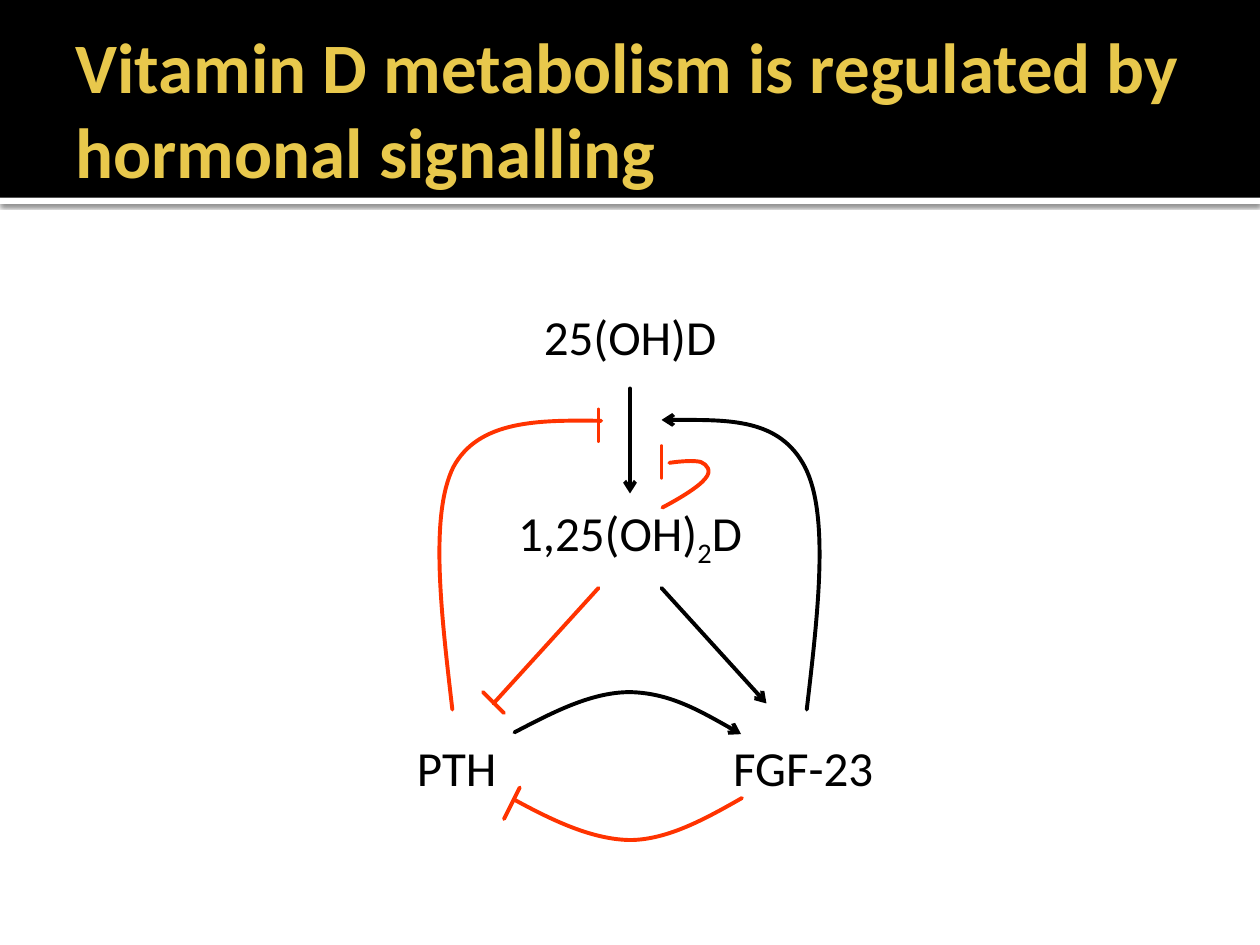
from lxml import etree
from pptx import Presentation
from pptx.dml.color import RGBColor
from pptx.enum.shapes import MSO_CONNECTOR, MSO_SHAPE
from pptx.enum.text import MSO_ANCHOR, MSO_AUTO_SIZE, PP_ALIGN
from pptx.oxml.ns import qn
from pptx.util import Pt

RECTANGLE = MSO_SHAPE.RECTANGLE
STRAIGHT = MSO_CONNECTOR.STRAIGHT
MIDDLE = MSO_ANCHOR.MIDDLE
LEFT, CENTER = PP_ALIGN.LEFT, PP_ALIGN.CENTER
NO_AUTOFIT = MSO_AUTO_SIZE.NONE
TITLE_ONLY_LAYOUT = 5

THEME = {
    "font": "Calibri", "title_size": 40.5, "label_size": 28, "line_width": 2.25,
    "title": RGBColor(0xE8, 0xC8, 0x4C), "black": RGBColor(0, 0, 0),
    "white": RGBColor(255, 255, 255), "inhibit": RGBColor(0xFF, 0x33, 0x00),
}

# Content, all lengths in points
SLIDE_SIZE = (720, 540)
TITLE = "Vitamin D metabolism is regulated by hormonal signalling"
TITLE_BOX = (36, 12.24, 648, 98.64)
HEADER_HEIGHT, RULE_HEIGHT = 113, 3.6

# Runs (text, is subscript), centre x, top, width
LABEL_HEIGHT = 60
LABELS = [
    ([("25(OH)D", False)], 360, 162, 204),
    ([("1,25(OH)", False), ("2", True), ("D", False)], 360, 276, 204),
    ([("PTH", False)], 261, 408, 102),
    ([("FGF-23", False)], 459, 408, 102),
]

# Start, end, colour, has arrowhead
STRAIGHT_LINES = [
    ((360, 222), (360, 282), "black", True),
    ((378, 336), (438, 402), "black", True),
    ((342, 336), (282, 402), "inhibit", False),
    # Inhibition bars
    ((276, 395.5), (288, 407.5), "inhibit", False),
    ((288, 468), (297, 450), "inhibit", False),
    ((342, 234), (342, 252), "inhibit", False),
    ((378, 255), (378, 273), "inhibit", False),
]

# Start point followed by three Bezier points per segment, colour, has arrowhead
CURVES = [
    # PTH to FGF-23
    ([(294, 418.5), (316, 407), (338, 395.5), (360, 395.5),
      (382, 396), (402.5, 407.5), (423.5, 419.5)], "black", True),
    # FGF-23 to PTH
    ([(294, 457), (316, 469), (339, 480), (361, 480),
      (382, 479.5), (403, 468), (424, 456)], "inhibit", False),
    # PTH to the conversion step
    ([(258.5, 405.5), (252, 350), (245.5, 294.5), (259, 267),
      (273.5, 240), (308, 240), (343.5, 240.5)], "inhibit", False),
    # FGF-23 to the conversion step
    ([(461, 405.5), (467.5, 350), (474, 294.5), (460, 267),
      (445.5, 239), (412, 240), (378, 240)], "black", True),
    # Self-inhibition loop
    ([(378.5, 290), (389, 284.5), (399.5, 278), (403, 273.5),
      (407, 269), (404, 265.5), (400.5, 264),
      (396.5, 263), (389.5, 263.5), (382.5, 264.5)], "inhibit", False),
]


def points(values):
    return [Pt(value) for value in values]


def add_band(slide, top, height, color):
    band = slide.shapes.add_shape(RECTANGLE, *points((0, top, SLIDE_SIZE[0], height)))
    band.shadow.inherit = False
    band.fill.solid()
    band.fill.fore_color.rgb = THEME[color]
    band.line.fill.background()
    return band


def add_shadow(shape):
    effects = shape._element.spPr.find(qn("a:effectLst"))
    shadow = etree.SubElement(effects, qn("a:outerShdw"), blurRad=str(Pt(2.5)),
                              dist=str(Pt(0.8)), dir="5400000", rotWithShape="0")
    color = etree.SubElement(shadow, qn("a:srgbClr"), val=str(THEME["black"]))
    etree.SubElement(color, qn("a:alpha"), val="60000")


def format_text(paragraph, size, color, alignment):
    paragraph.alignment = alignment
    paragraph.font.name = THEME["font"]
    paragraph.font.size = Pt(THEME[size])
    paragraph.font.color.rgb = THEME[color]


def add_title(slide):
    title = slide.shapes.title
    title.left, title.top, title.width, title.height = points(TITLE_BOX)
    frame = title.text_frame
    frame.text = TITLE
    frame.auto_size = NO_AUTOFIT
    frame.vertical_anchor = MIDDLE
    frame.margin_left = Pt(7.2)
    frame.margin_right = frame.margin_top = frame.margin_bottom = Pt(3.6)
    format_text(frame.paragraphs[0], "title_size", "title", LEFT)
    frame.paragraphs[0].font.bold = True
    slide.shapes._spTree.append(title._element)  # in front of the bands


def add_label(slide, runs, center, top, width):
    box = slide.shapes.add_textbox(*points((center - width / 2, top, width, LABEL_HEIGHT)))
    frame = box.text_frame
    frame.word_wrap = True
    frame.vertical_anchor = MIDDLE
    paragraph = frame.paragraphs[0]
    format_text(paragraph, "label_size", "black", CENTER)
    for text, is_subscript in runs:
        run = paragraph.add_run()
        run.text = text
        if is_subscript:
            run.font._element.set("baseline", "-25000")


def format_line(shape, color, has_arrow):
    shape.line.color.rgb = THEME[color]
    shape.line.width = Pt(THEME["line_width"])
    properties = shape._element.spPr
    outline = properties.find(qn("a:ln"))
    outline.set("cap", "rnd")
    etree.SubElement(outline, qn("a:round"))
    if has_arrow:
        etree.SubElement(outline, qn("a:tailEnd"), type="arrow")
    etree.SubElement(properties, qn("a:effectLst"))


def add_curve(slide, vertices):
    start, *rest = [points(vertex) for vertex in vertices]
    builder = slide.shapes.build_freeform(*start)
    builder.add_line_segments(rest, close=False)
    curve = builder.convert_to_shape()
    curve.fill.background()
    # Join every three straight segments into one cubic Bezier
    segments = list(curve._element.iter(qn("a:lnTo")))
    for first in range(0, len(segments), 3):
        group = segments[first:first + 3]
        bezier = etree.Element(qn("a:cubicBezTo"))
        group[0].addprevious(bezier)
        for segment in group:
            bezier.append(segment[0])
            segment.getparent().remove(segment)
    return curve


def main():
    presentation = Presentation()
    presentation.slide_width, presentation.slide_height = points(SLIDE_SIZE)
    slide = presentation.slides.add_slide(presentation.slide_layouts[TITLE_ONLY_LAYOUT])

    # Header
    add_shadow(add_band(slide, HEADER_HEIGHT, RULE_HEIGHT, "white"))
    add_band(slide, 0, HEADER_HEIGHT, "black")
    add_title(slide)

    # Diagram
    for label in LABELS:
        add_label(slide, *label)
    for start, end, color, has_arrow in STRAIGHT_LINES:
        line = slide.shapes.add_connector(STRAIGHT, *points(start + end))
        format_line(line, color, has_arrow)
    for vertices, color, has_arrow in CURVES:
        format_line(add_curve(slide, vertices), color, has_arrow)

    presentation.save("out.pptx")


if __name__ == "__main__":
    main()
